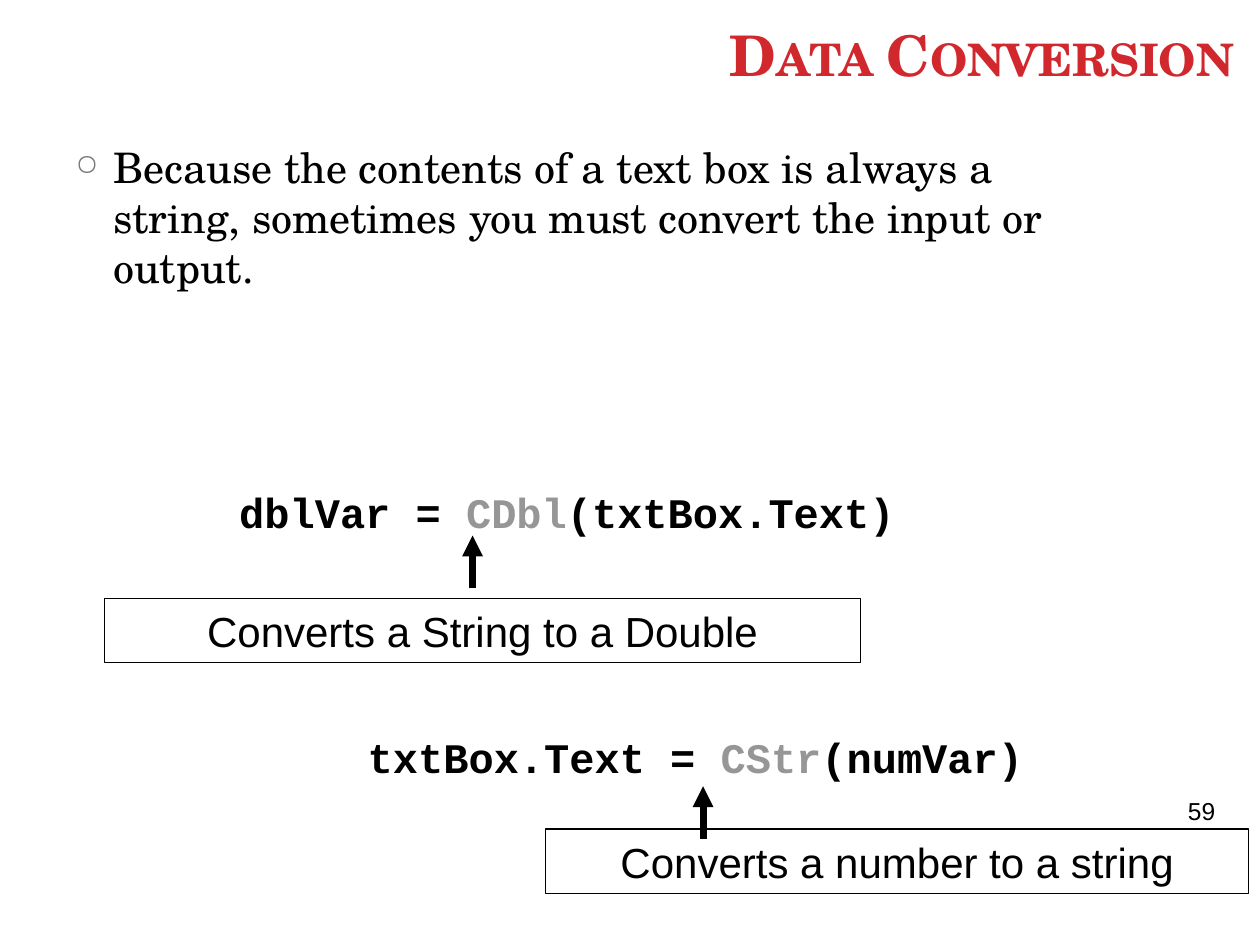
from pptx import Presentation
from pptx.util import Inches, Pt
from pptx.dml.color import RGBColor
from pptx.enum.shapes import MSO_CONNECTOR, MSO_SHAPE
from pptx.enum.text import MSO_ANCHOR, PP_ALIGN
from pptx.oxml.ns import qn
from lxml.etree import SubElement

HUE = {"red": "D1282E", "ink": "000000", "gray": "969696", "dot": "7A7A7A"}
SERIF = "TeX Gyre Schola"
FORM = {
    "title": {"name": SERIF, "size": Pt(32), "bold": True},
    "body": {"name": SERIF, "size": Pt(24), "bold": False},
    "code": {"name": "Courier New", "size": Pt(24), "bold": True},
    "note": {"name": "Arial", "size": Pt(24), "bold": False},
    "page": {"name": "Arial", "size": Pt(14), "bold": False},
}
TITLE = "Data Conversion"
POINT = ("Because the contents of a text box is always a string, "
         "sometimes you must convert the input or output.")
CODE = [
    (1.3, [("dblVar = ", "ink"), ("CDbl", "gray"), ("(txtBox.Text)", "ink")]),
    (2.32, [("txtBox.Text = ", "ink"), ("CStr", "gray"), ("(numVar)", "ink")]),
]
NOTES = [
    ("Converts a String to a Double", (0.83, 4.75, 6, 0.51)),
    ("Converts a number to a string", (4.33, 6.58, 5.58, 0.51)),
]
ARROWS = [(3.75, 4.25), (5.58, 6.24)]
RISE = 0.42
GAP = 111


def tint(key):
    return RGBColor.from_string(HUE[key])


def write(para, text, form, hue="ink"):
    run = para.add_run()
    run.text = text
    for key, val in FORM[form].items():
        setattr(run.font, key, val)
    run.font.color.rgb = tint(hue)
    return run


def add_box(slide, area):
    box = slide.shapes.add_textbox(*map(Inches, area))
    box.text_frame.word_wrap = True
    return box.text_frame


def add_dot(para):
    props = para._p.get_or_add_pPr()
    props.set("marL", str(Inches(0.3)))
    props.set("indent", str(Inches(-0.3)))
    color = SubElement(props, qn("a:buClr"))
    SubElement(color, qn("a:srgbClr"), val=HUE["dot"])
    SubElement(props, qn("a:buSzPct"), val="70000")
    SubElement(props, qn("a:buChar"), char="○")


def add_title(slide):
    title = slide.shapes.title
    place = zip(("left", "top", "width", "height"), (0.17, 0.14, 9.72, 0.61))
    for key, val in place:
        setattr(title, key, Inches(val))
    frame = title.text_frame
    frame.vertical_anchor = MSO_ANCHOR.BOTTOM
    para = frame.paragraphs[0]
    para.alignment = PP_ALIGN.RIGHT
    run = write(para, TITLE, "title", "red")
    run._r.get_or_add_rPr().set("cap", "small")


def add_body(slide):
    frame = add_box(slide, (0.5, 1.07, 8.28, 6.01))
    para = frame.paragraphs[0]
    para.space_before = Pt(6)
    add_dot(para)
    write(para, POINT, "body")
    for left, parts in CODE:
        para = frame.add_paragraph()
        para.space_before = Pt(GAP)
        para._p.get_or_add_pPr().set("marL", str(Inches(left)))
        for text, hue in parts:
            write(para, text, "code", hue)


def add_note(slide, text, area):
    rect = slide.shapes.add_shape(MSO_SHAPE.RECTANGLE, *map(Inches, area))
    rect.shadow.inherit = False
    rect.fill.background()
    rect.line.color.rgb = tint("ink")
    rect.line.width = Pt(0.75)
    frame = rect.text_frame
    frame.word_wrap = True
    frame.vertical_anchor = MSO_ANCHOR.MIDDLE
    para = frame.paragraphs[0]
    para.alignment = PP_ALIGN.CENTER
    write(para, text, "note")


def add_arrow(slide, x, top):
    ends = map(Inches, (x, top + RISE, x, top))
    arrow = slide.shapes.add_connector(MSO_CONNECTOR.STRAIGHT, *ends)
    arrow.line.color.rgb = tint("ink")
    arrow.line.width = Pt(4)
    SubElement(arrow.line._get_or_add_ln(), qn("a:tailEnd"), type="triangle")
    SubElement(arrow._element.spPr, qn("a:effectLst"))


def main():
    deck = Presentation()
    deck.slide_width, deck.slide_height = Inches(10), Inches(7.5)
    slide = deck.slides.add_slide(deck.slide_layouts[5])
    add_title(slide)
    add_body(slide)
    page = add_box(slide, (9.33, 6.27, 0.67, 0.57))
    write(page.paragraphs[0], "59", "page")
    for text, area in NOTES:
        add_note(slide, text, area)
    for x, top in ARROWS:
        add_arrow(slide, x, top)
    deck.save("out.pptx")


if __name__ == "__main__":
    main()
